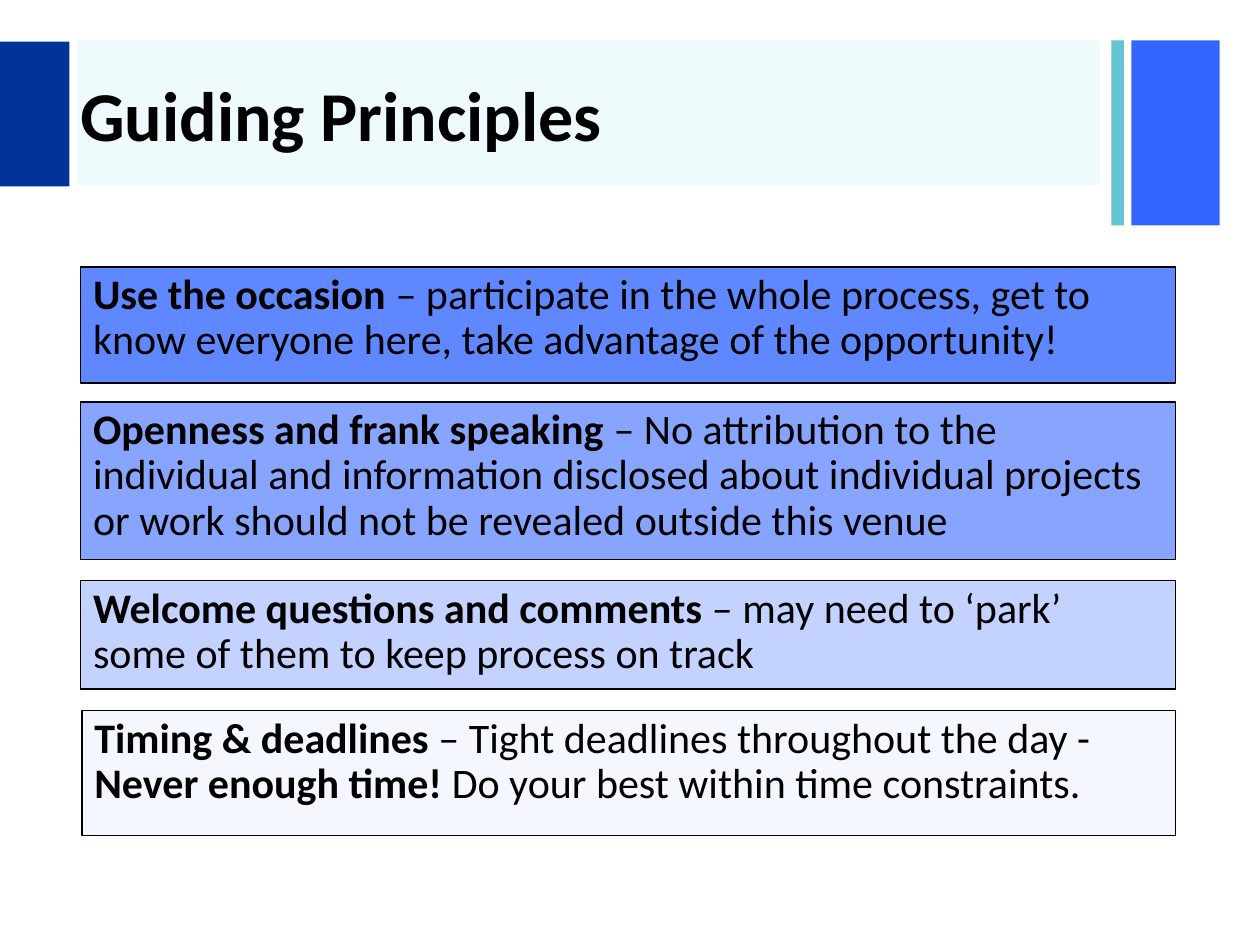
from lxml import etree
from pptx import Presentation
from pptx.dml.color import RGBColor
from pptx.enum.shapes import MSO_SHAPE
from pptx.enum.text import MSO_ANCHOR, PP_ALIGN
from pptx.oxml.ns import qn
from pptx.util import Inches, Pt

RECTANGLE = MSO_SHAPE.RECTANGLE
TOP, MIDDLE = MSO_ANCHOR.TOP, MSO_ANCHOR.MIDDLE
LEFT = PP_ALIGN.LEFT

FONT = "Calibri"
BLACK, BLUE, NAVY = "000000", "3366FF", "003399"
TEAL, AQUA = "65C4D2", "14C5D0"

PRINCIPLES = [
    ((0.64, 2.12, 8.69, 0.92), 78, [
        ("Use the occasion", True),
        (" – participate in the whole process, get to know everyone here, "
         "take advantage of the opportunity!", False)]),
    ((0.64, 3.19, 8.69, 1.25), 59, [
        ("Openness and frank speaking", True),
        (" – No attribution to the individual and information disclosed about "
         "individual projects or work should not be revealed outside this venue", False)]),
    ((0.64, 4.61, 8.69, 0.86), 29, [
        ("Welcome questions and comments", True),
        (" – may need to ‘park’ some of them to keep process on track", False)]),
    ((0.65, 5.64, 8.68, 0.99), 5, [
        ("Timing & deadlines ", True),
        ("– Tight deadlines throughout the day - ", False),
        ("Never enough time! ", True),
        ("Do your best within time constraints.", False)]),
]


def paint(color_format, value):
    """Set a colour from a hex string."""
    color_format.rgb = RGBColor.from_string(value)


def add_panel(slide, box, color, opacity=100):
    """Add a borderless rectangle with the given opacity in percent."""
    panel = slide.shapes.add_shape(RECTANGLE, *map(Inches, box))
    panel.shadow.inherit = False
    panel.fill.solid()
    paint(panel.fill.fore_color, color)
    panel.line.fill.background()
    if opacity < 100:
        tint = panel.fill._xPr.find(qn("a:solidFill"))[0]
        etree.SubElement(tint, qn("a:alpha"), val=str(opacity * 1000))
    return panel


def write(frame, parts, size, anchor):
    """Write (text, bold) parts as one left-aligned paragraph."""
    frame.word_wrap = True
    frame.vertical_anchor = anchor
    paragraph = frame.paragraphs[0]
    paragraph.alignment = LEFT
    for text, bold in parts:
        run = paragraph.add_run()
        run.text = text
        run.font.name = FONT
        run.font.size = Pt(size)
        run.font.bold = bold
        paint(run.font.color, BLACK)
    return paragraph


def add_header(slide, box):
    """Add the title band with its side blocks inside the box."""
    left, top, width, height = box
    right, band_height = left + width, 1.15
    add_panel(slide, (right - 0.7, top, 0.7, height), BLUE)
    add_panel(slide, (right - 0.86, top, 0.1, height), TEAL)
    add_panel(slide, (left + 0.61, top, 8.12, band_height), AQUA, 7)
    add_panel(slide, (left, top + 0.01, 0.55, band_height), NAVY)
    title_box = (left + 0.54, top + 0.02, 8.27, 1.12)
    title = slide.shapes.add_textbox(*map(Inches, title_box))
    write(title.text_frame, [("Guiding Principles", True)], 40, MIDDLE)


def add_principle(slide, box, opacity, parts):
    """Add one outlined principle filling the box."""
    principle = add_panel(slide, box, BLUE, opacity)
    paint(principle.line.color, BLACK)
    principle.line.width = Pt(0.75)
    write(principle.text_frame, parts, 24, TOP).line_spacing = 0.9


def main():
    """Build the slide and save it."""
    deck = Presentation()
    deck.slide_width, deck.slide_height = Inches(10), Inches(7.5)
    slide = deck.slides.add_slide(deck.slide_layouts[6])
    add_header(slide, (0, 0.32, 9.68, 1.47))
    for box, opacity, parts in PRINCIPLES:
        add_principle(slide, box, opacity, parts)
    deck.save("out.pptx")


if __name__ == "__main__":
    main()
